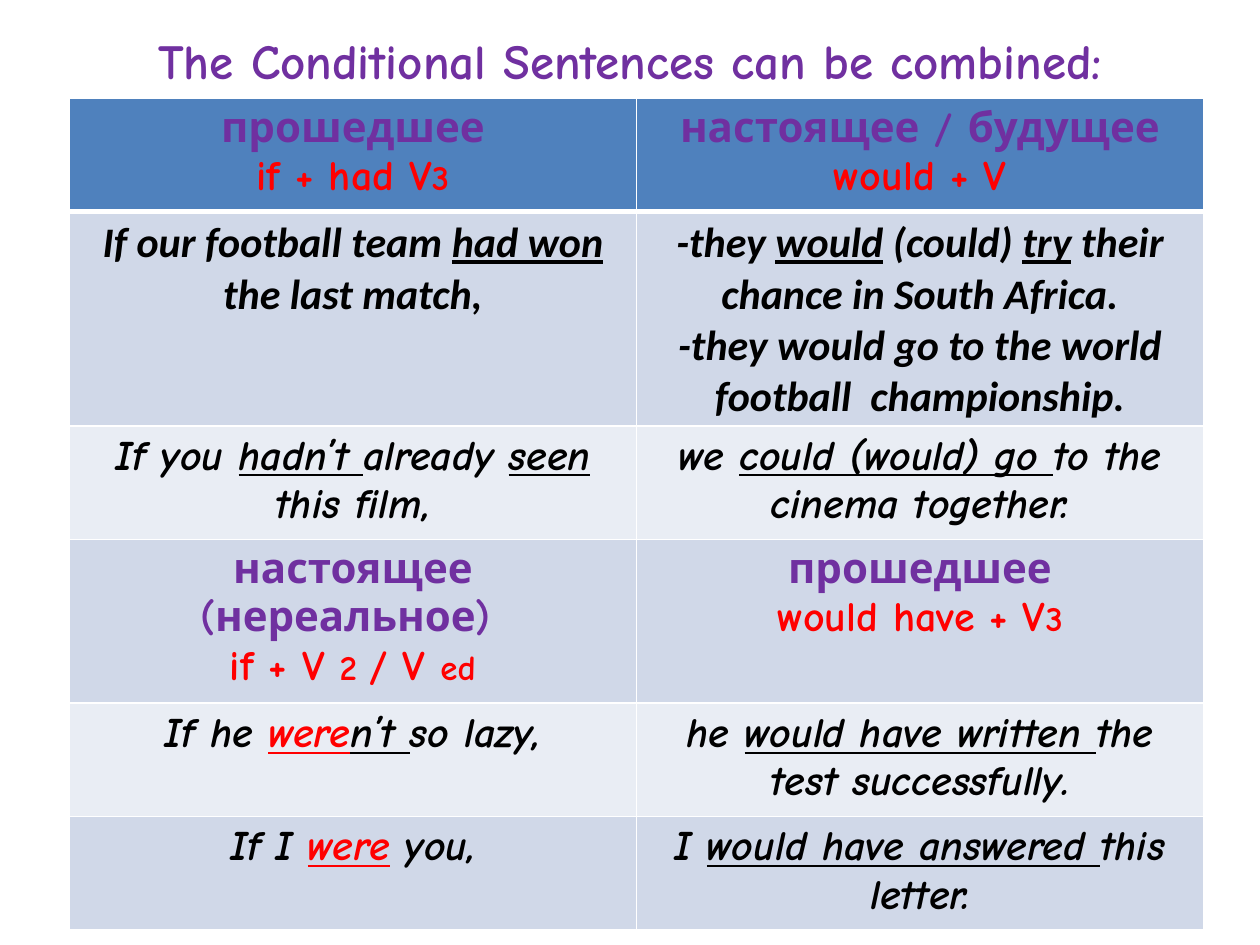
from lxml.etree import SubElement
from pptx import Presentation
from pptx.dml.color import RGBColor
from pptx.enum.text import MSO_ANCHOR as Anchor, PP_ALIGN as Align
from pptx.oxml.ns import qn
from pptx.util import Cm, Pt

PURPLE = RGBColor(0x70, 0x30, 0xA0)
RED = RGBColor(0xFF, 0x00, 0x00)
BLACK = RGBColor(0x00, 0x00, 0x00)
WHITE = RGBColor(0xFF, 0xFF, 0xFF)
HEADER = RGBColor(0x4F, 0x81, 0xBD)
BAND_DARK = RGBColor(0xD0, 0xD8, 0xE8)
BAND_LIGHT = RGBColor(0xE9, 0xED, 0xF4)

COMIC = "Comic Neue"
STYLES = {
    "title": dict(color=PURPLE, size=28),
    "tense": dict(color=PURPLE),
    "formula": dict(color=RED),
    "small": dict(color=RED, size=20),
    "plain": dict(italic=True),
    "verb": dict(italic=True, underline=True),
    "red verb": dict(color=RED, italic=True, underline=True),
    "match": dict(italic=True, name="Calibri"),
    "match verb": dict(italic=True, underline=True, name="Calibri"),
}

TITLE = "The Conditional Sentences can be combined:"
ROWS = [
    (2.1, HEADER,
     [[("прошедшее", "tense")], [("if + had V", "formula"), ("3", "small")]],
     [[("настоящее / будущее", "tense")], [("would + V", "formula")]]),
    (4.2, BAND_DARK,
     [[("If our football team ", "match"), ("had won ", "match verb"),
       ("the last match,", "match")]],
     [[("-they ", "match"), ("would", "match verb"), (" (could) ", "match"),
       ("try", "match verb"), (" their chance in South Africa.", "match")],
      [("-they would go to the world football  championship.", "match")]]),
    (2.1, BAND_LIGHT,
     [[("If you ", "plain"), ("hadn’t ", "verb"), ("already ", "plain"),
       ("seen", "verb"), (" this film,", "plain")]],
     [[("we ", "plain"), ("could (would) go ", "verb"),
       ("to the cinema together.", "plain")]]),
    (3.1, BAND_DARK,
     [[("настоящее (нереальное) ", "tense")],
      [("if + V ", "formula"), ("2 ", "small"), ("/ V ", "formula"), ("ed", "small")]],
     [[("прошедшее", "tense")], [("would have + V", "formula"), ("3", "small")]]),
    (2.1, BAND_LIGHT,
     [[("If he ", "plain"), ("were", "red verb"), ("n’t ", "verb"),
       ("so lazy,", "plain")]],
     [[("he ", "plain"), ("would have written ", "verb"),
       ("the test successfully.", "plain")]]),
    (2.1, BAND_DARK,
     [[("If I ", "plain"), ("were", "red verb"), (" you,", "plain")]],
     [[("I ", "plain"), ("would have answered ", "verb"),
       ("this letter.", "plain")]]),
]


def style_span(span, color=BLACK, size=24, name=COMIC, italic=False, underline=False):
    """Format one run of bold text."""
    font = span.font
    font.name, font.size, font.bold = name, Pt(size), True
    font.italic, font.underline = italic, underline
    font.color.rgb = color


def write_paragraphs(frame, paragraphs):
    """Fill a text frame with centred paragraphs of styled runs."""
    for index, pieces in enumerate(paragraphs):
        para = frame.add_paragraph() if index else frame.paragraphs[0]
        para.alignment = Align.CENTER
        for text, style in pieces:
            span = para.add_run()
            span.text = text
            style_span(span, **STYLES[style])


def draw_borders(cell, bottom):
    """Give a cell white borders, with its own width at the bottom."""
    properties = cell._tc.get_or_add_tcPr()
    for side, width in (("L", 1), ("R", 1), ("T", 1), ("B", bottom)):
        line = SubElement(properties, qn(f"a:ln{side}"), w=str(Pt(width)))
        fill = SubElement(line, qn("a:solidFill"))
        SubElement(fill, qn("a:srgbClr"), val=str(WHITE))


def add_title(page, left, top, width, height):
    """Place the slide title in the given box."""
    box = page.shapes.add_textbox(left, top, width, height)
    box.text_frame.word_wrap = True
    box.text_frame.vertical_anchor = Anchor.MIDDLE
    write_paragraphs(box.text_frame, [[(TITLE, "title")]])


def add_conditionals_table(page, left, top, width):
    """Place the table of mixed conditionals in two equal columns."""
    height = Cm(sum(row[0] for row in ROWS))
    table = page.shapes.add_table(len(ROWS), 2, left, top, width, height).table
    for index, (row_height, color, *cells) in enumerate(ROWS):
        table.rows[index].height = Cm(row_height)
        for column, paragraphs in enumerate(cells):
            cell = table.cell(index, column)
            draw_borders(cell, bottom=1 if index else 3)
            cell.fill.solid()
            cell.fill.fore_color.rgb = color
            write_paragraphs(cell.text_frame, paragraphs)


def main():
    """Build the slide and save the deck."""
    deck = Presentation()
    deck.slide_width, deck.slide_height = Cm(25.4), Cm(19.05)
    page = deck.slides.add_slide(deck.slide_layouts[6])
    add_title(page, Cm(1.27), Cm(0.4), Cm(22.86), Cm(1.6))
    add_conditionals_table(page, Cm(1.4), Cm(1.98), Cm(22.86))
    deck.save("out.pptx")


if __name__ == "__main__":
    main()
